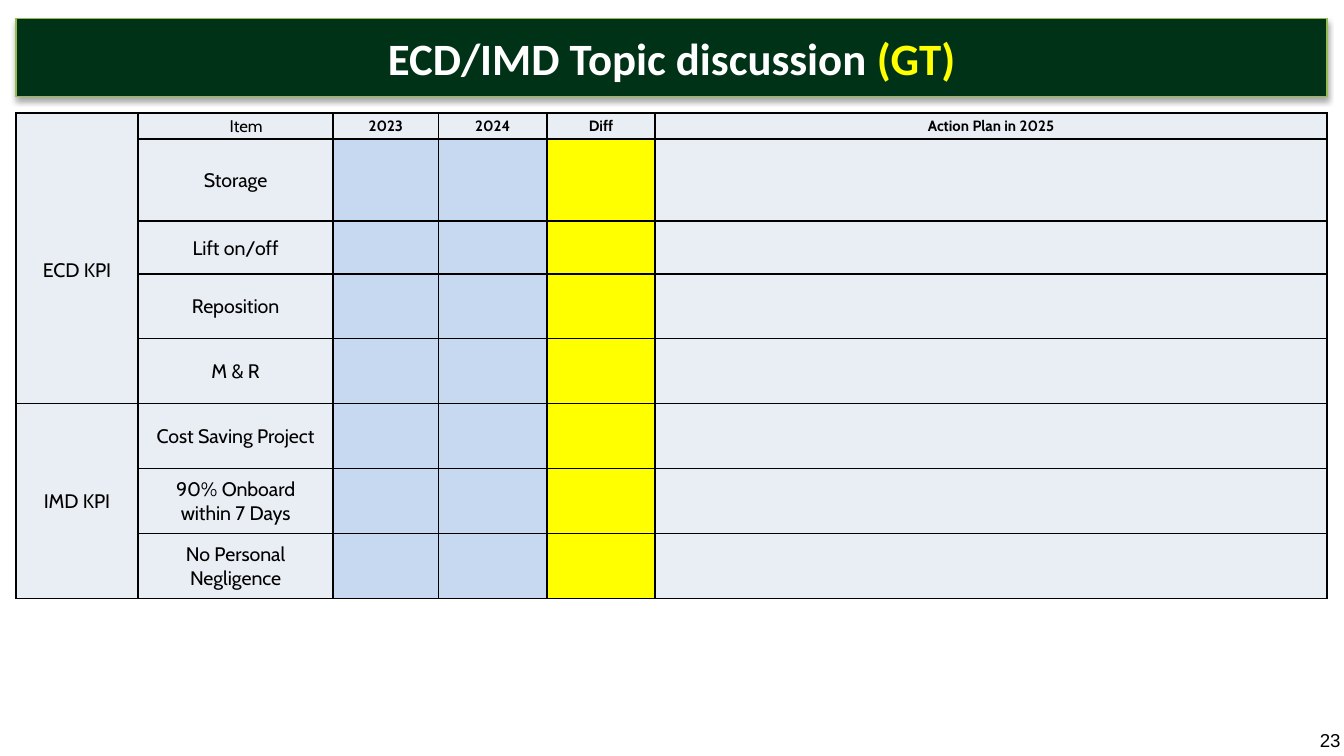
from dataclasses import dataclass

from lxml.etree import SubElement
from pptx import Presentation
from pptx.dml.color import RGBColor
from pptx.enum.shapes import MSO_SHAPE
from pptx.enum.text import MSO_ANCHOR, PP_ALIGN
from pptx.oxml import parse_xml
from pptx.oxml.ns import nsdecls, qn
from pptx.util import Pt


@dataclass(frozen=True)
class Theme:
    banner: str = "003217"
    banner_line: str = "98B955"
    white: str = "FFFFFF"
    black: str = "000000"
    yellow: str = "FFFF00"
    plain: str = "E9EDF4"
    blue: str = "C6D9F1"
    title_font: str = "Calibri"
    table_font: str = "Cabin"
    number_font: str = "Arial"
    title_size: float = 24
    label_size: float = 10.5
    item_size: float = 9
    header_size: float = 8
    number_size: float = 10


THEME = Theme()
LEFT, WIDTH = 8.5, 702.5
COLUMNS = [65.5, 104.5, 56.5, 58, 58, 360]
ROWS = [14, 44, 28.2] + [34.8] * 5
HEADERS = ["2023", "2024", "Diff", "Action Plan in 2025"]
VALUE_FILLS = [THEME.blue, THEME.blue, THEME.yellow, THEME.plain]
GROUPS = {
    "ECD KPI": ["Storage", "Lift on/off", "Reposition", "M & R"],
    "IMD KPI": ["Cost Saving Project", "90% Onboard\nwithin 7 Days",
                "No Personal Negligence"],
}


def add_text(p, text, *, size, font, color=THEME.black, bold=False, align=PP_ALIGN.CENTER):
    p.alignment = align
    r = p.add_run()
    r.text = text
    r.font.size = Pt(size)
    r.font.name = font
    r.font.bold = bold
    r.font.color.rgb = RGBColor.from_string(color)


def set_margins(box, left=0, top=0, right=0, bottom=0):
    box.margin_left, box.margin_top = Pt(left), Pt(top)
    box.margin_right, box.margin_bottom = Pt(right), Pt(bottom)


def add_shadow(s):
    effects = SubElement(s._element.spPr, qn("a:effectLst"))
    effects.append(parse_xml(
        f'<a:outerShdw {nsdecls("a")} blurRad="{Pt(3.1)}" dist="{Pt(1.8)}" '
        f'dir="5400000" rotWithShape="0"><a:srgbClr val="{THEME.black}">'
        '<a:alpha val="35000"/></a:srgbClr></a:outerShdw>'))


def add_banner(slide):
    s = slide.shapes.add_shape(
        MSO_SHAPE.RECTANGLE, Pt(LEFT), Pt(9.8), Pt(WIDTH), Pt(42))
    s.fill.solid()
    s.fill.fore_color.rgb = RGBColor.from_string(THEME.banner)
    s.line.color.rgb = RGBColor.from_string(THEME.banner_line)
    s.line.width = Pt(0.75)
    add_shadow(s)
    tf = s.text_frame
    set_margins(tf)
    tf.vertical_anchor = MSO_ANCHOR.MIDDLE
    for text, color in (("ECD/IMD Topic discussion ", THEME.white), ("(GT)", THEME.yellow)):
        add_text(tf.paragraphs[0], text, size=THEME.title_size,
                 font=THEME.title_font, color=color, bold=True)


def style_cell(cell, fill):
    set_margins(cell, 0.7, 0.7, 0.7)
    cell.vertical_anchor = MSO_ANCHOR.MIDDLE
    cell.fill.solid()
    cell.fill.fore_color.rgb = RGBColor.from_string(fill)
    tc_pr = cell._tc.get_or_add_tcPr()
    for i, side in enumerate("LRTB"):
        tc_pr.insert(i, parse_xml(
            f'<a:ln{side} {nsdecls("a")} w="{Pt(1)}"><a:solidFill>'
            f'<a:srgbClr val="{THEME.black}"/></a:solidFill></a:ln{side}>'))


def fill_cell(cell, text, size=THEME.label_size, bold=False):
    tf = cell.text_frame
    for i, line in enumerate(text.split("\n")):
        p = tf.add_paragraph() if i else tf.paragraphs[0]
        add_text(p, line, size=size, font=THEME.table_font, bold=bold)


def add_kpi_table(slide):
    table = slide.shapes.add_table(
        len(ROWS), len(COLUMNS), Pt(LEFT), Pt(60.5), Pt(WIDTH), Pt(sum(ROWS))).table
    for column, width in zip(table.columns, COLUMNS):
        column.width = Pt(width)
    for row, height in zip(table.rows, ROWS):
        row.height = Pt(height)
    for r in range(len(ROWS)):
        for c in range(len(COLUMNS)):
            is_value = r > 0 and c > 1
            style_cell(table.cell(r, c), VALUE_FILLS[c - 2] if is_value else THEME.plain)

    item = table.cell(0, 1)
    fill_cell(item, "Item", THEME.item_size)
    item.margin_left = Pt(12)
    for c, header in enumerate(HEADERS, start=2):
        fill_cell(table.cell(0, c), header, THEME.header_size, bold=True)

    first, row = 0, 1
    for group, labels in GROUPS.items():
        for label in labels:
            fill_cell(table.cell(row, 1), label)
            row += 1
        table.cell(first, 0).merge(table.cell(row - 1, 0))
        fill_cell(table.cell(first, 0), group)
        first = row
    # The first group also spans the header row, so its label sits a little lower.
    table.cell(0, 0).margin_top = Pt(13.5)


def add_slide_number(slide):
    tf = slide.shapes.add_textbox(Pt(700), Pt(388), Pt(20), Pt(16.5)).text_frame
    set_margins(tf, 7.2, 3.6, 0, 3.6)
    tf.word_wrap = False
    tf.vertical_anchor = MSO_ANCHOR.MIDDLE
    add_text(tf.paragraphs[0], "23", size=THEME.number_size,
             font=THEME.number_font, align=PP_ALIGN.LEFT)


def main():
    prs = Presentation()
    prs.slide_width, prs.slide_height = Pt(720), Pt(405)
    slide = prs.slides.add_slide(prs.slide_layouts[6])
    add_banner(slide)
    add_kpi_table(slide)
    add_slide_number(slide)
    prs.save("out.pptx")


if __name__ == "__main__":
    main()
